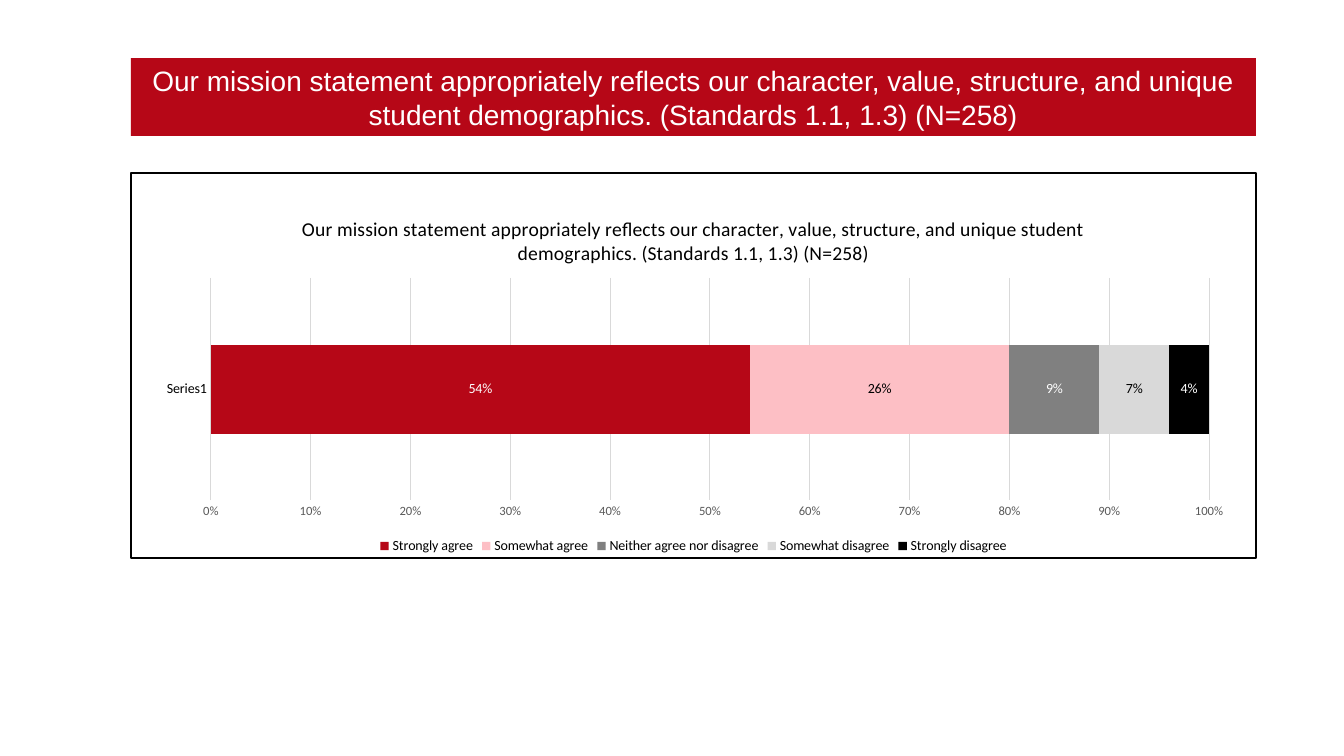
from lxml import etree
from pptx import Presentation
from pptx.chart.data import CategoryChartData
from pptx.dml.color import RGBColor
from pptx.enum.chart import XL_CHART_TYPE, XL_LABEL_POSITION, XL_LEGEND_POSITION, XL_TICK_MARK
from pptx.enum.shapes import MSO_SHAPE
from pptx.enum.text import MSO_ANCHOR, PP_ALIGN
from pptx.oxml.ns import qn
from pptx.util import Emu, Pt

RECTANGLE = MSO_SHAPE.RECTANGLE
BAR_STACKED = XL_CHART_TYPE.BAR_STACKED
LABEL_CENTER = XL_LABEL_POSITION.CENTER
LEGEND_BOTTOM = XL_LEGEND_POSITION.BOTTOM
NO_TICKS = XL_TICK_MARK.NONE
MIDDLE = MSO_ANCHOR.MIDDLE
CENTER = PP_ALIGN.CENTER

RED = RGBColor(0xB6, 0x07, 0x17)
PINK = RGBColor(0xFD, 0xBF, 0xC5)
GRAY = RGBColor(0x80, 0x80, 0x80)
LIGHT_GRAY = RGBColor(0xD9, 0xD9, 0xD9)
DARK_GRAY = RGBColor(0x59, 0x59, 0x59)
BLACK = RGBColor(0, 0, 0)
WHITE = RGBColor(0xFF, 0xFF, 0xFF)

PX_PER_INCH = 100.8
QUESTION = ("Our mission statement appropriately reflects our character, value, "
            "structure, and unique student demographics. (Standards 1.1, 1.3) (N=258)")
# answer, share, bar colour, label colour
ANSWERS = [
    ("Strongly agree", 0.54, RED, WHITE),
    ("Somewhat agree", 0.26, PINK, BLACK),
    ("Neither agree nor disagree", 0.09, GRAY, WHITE),
    ("Somewhat disagree", 0.07, LIGHT_GRAY, BLACK),
    ("Strongly disagree", 0.04, BLACK, WHITE),
]


def px(length):
    return Emu(round(length * 914400 / PX_PER_INCH))


def set_font(font, name, size, color):
    font.name = name
    font.size = Pt(size)
    font.bold = False
    font.color.rgb = color


def set_line(line, color, width):
    line.color.rgb = color
    line.width = Pt(width)


def add_box(page, left, top, width, height):
    box = page.shapes.add_shape(RECTANGLE, px(left), px(top), px(width), px(height))
    box.shadow.inherit = False
    return box


def add_banner(page, text, left, top, width, height):
    box = add_box(page, left, top, width, height)
    box.fill.solid()
    box.fill.fore_color.rgb = RED
    box.line.fill.background()
    frame = box.text_frame
    frame.word_wrap = True
    frame.vertical_anchor = MIDDLE
    para = frame.paragraphs[0]
    para.text = text
    para.alignment = CENTER
    set_font(para.font, "Arial", 20, WHITE)


def add_border(page, left, top, width, height):
    box = add_box(page, left, top, width, height)
    box.fill.background()
    set_line(box.line, BLACK, 1)


def place_plot(chart, **fractions):
    """Fix the inner plot area as fractions of the chart."""
    plot_area = chart._chartSpace.chart.plotArea
    for old in plot_area.findall(qn("c:layout")):
        plot_area.remove(old)
    layout = etree.Element(qn("c:layout"))
    plot_area.insert(0, layout)
    manual = etree.SubElement(layout, qn("c:manualLayout"))
    settings = {"layoutTarget": "inner", "xMode": "edge", "yMode": "edge", **fractions}
    for tag, value in settings.items():
        etree.SubElement(manual, qn(f"c:{tag}")).set("val", str(value))


def style_axes(chart):
    category, value = chart.category_axis, chart.value_axis
    for axis, size, color in ((category, 10, BLACK), (value, 9, DARK_GRAY)):
        axis.major_tick_mark = axis.minor_tick_mark = NO_TICKS
        set_font(axis.tick_labels.font, "Calibri", size, color)
    category.has_major_gridlines = False
    set_line(category.format.line, LIGHT_GRAY, 0.75)
    value.minimum_scale, value.maximum_scale, value.major_unit = 0, 1, 0.1
    value.format.line.fill.background()
    value.has_major_gridlines = True
    set_line(value.major_gridlines.format.line, LIGHT_GRAY, 0.75)
    value.tick_labels.number_format = "0%"
    value.tick_labels.number_format_is_linked = False


def style_series(series, bar_color, label_color):
    series.format.fill.solid()
    series.format.fill.fore_color.rgb = bar_color
    labels = series.data_labels
    labels.show_value = True
    labels.number_format = "0%"
    labels.number_format_is_linked = False
    labels.position = LABEL_CENTER
    set_font(labels.font, "Calibri", 10, label_color)


def add_answer_chart(page, left, top, width, height):
    data = CategoryChartData(number_format="0%")
    data.categories = ["Series1"]
    for answer, share, _, _ in ANSWERS:
        data.add_series(answer, [share])
    chart = page.shapes.add_chart(
        BAR_STACKED, px(left), px(top), px(width), px(height), data).chart
    set_font(chart.font, "Calibri", 10, BLACK)

    # Title and legend
    title = chart.chart_title.text_frame
    title.text = QUESTION
    set_font(title.paragraphs[0].font, "Calibri", 14, BLACK)
    chart.chart_title.include_in_layout = False
    chart.has_legend = True
    chart.legend.position = LEGEND_BOTTOM
    chart.legend.include_in_layout = False
    set_font(chart.legend.font, "Calibri", 10, BLACK)

    # Bars and axes
    plot = chart.plots[0]
    plot.gap_width, plot.overlap, plot.vary_by_categories = 150, 100, False
    for series, (_, _, bar_color, label_color) in zip(plot.series, ANSWERS):
        style_series(series, bar_color, label_color)
    style_axes(chart)
    place_plot(chart, x=0.06, y=0.22, w=0.91, h=0.62)


def main():
    deck = Presentation()
    deck.slide_width, deck.slide_height = px(1344), px(756)
    page = deck.slides.add_slide(deck.slide_layouts[6])
    add_banner(page, QUESTION, 131, 58, 1125, 78)
    add_border(page, 131, 173, 1125, 385)
    add_answer_chart(page, 145, 199, 1097, 359)
    deck.save("out.pptx")


if __name__ == "__main__":
    main()
